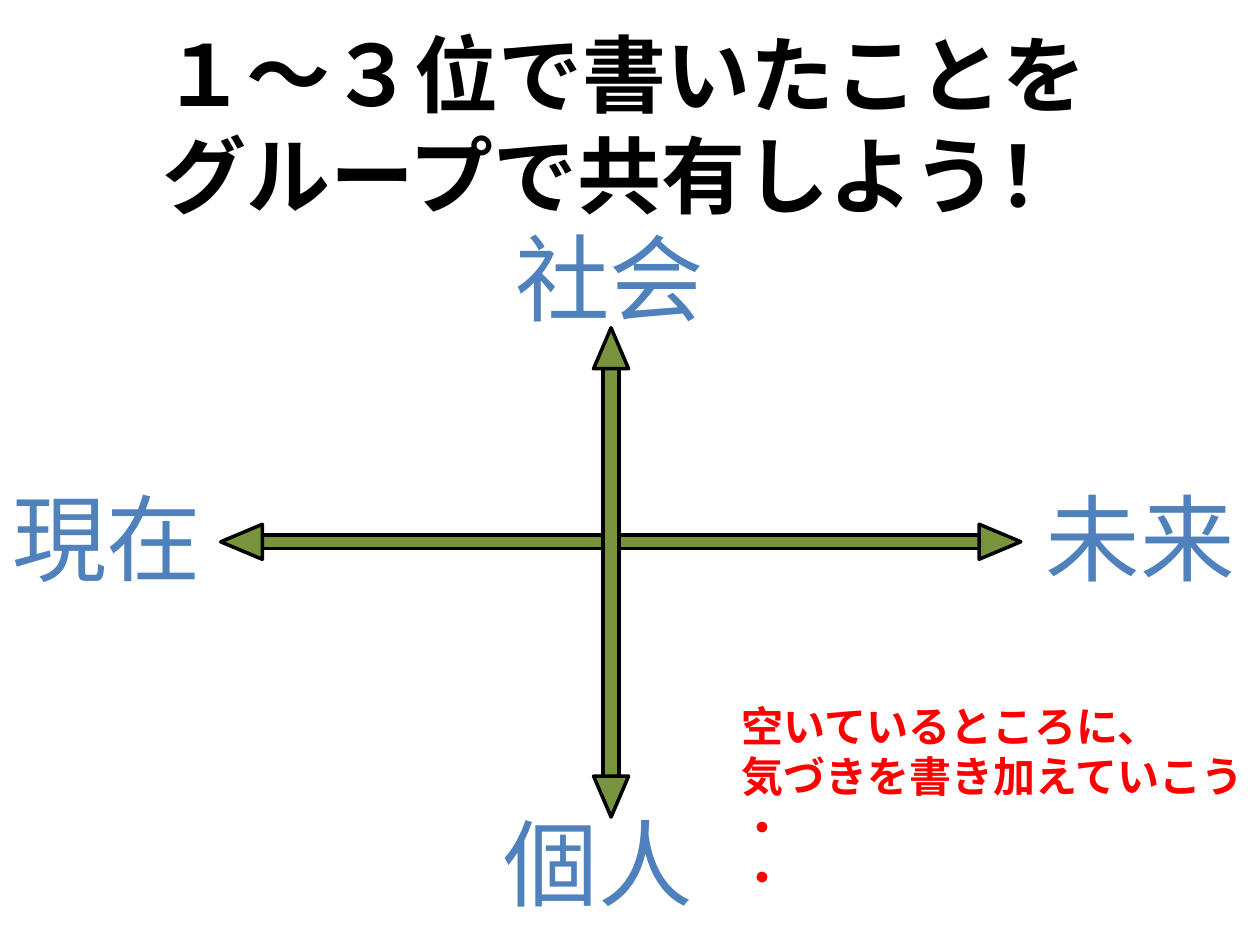
"""Build a slide with crossed time and society axes for group sharing."""
from pptx import Presentation
from pptx.dml.color import RGBColor
from pptx.enum.shapes import MSO_SHAPE as Kind
from pptx.enum.text import MSO_ANCHOR as Anchor, MSO_AUTO_SIZE as Auto, PP_ALIGN as Align
from pptx.util import Pt


def tint(code):
    return RGBColor.from_string(code)


def write(box, lines, look, color):
    frame = box.text_frame
    frame.word_wrap = True
    frame.auto_size = Auto.NONE
    frame.vertical_anchor = Anchor.TOP
    frame.text = "\n".join(lines)
    for para in frame.paragraphs:
        para.alignment = Align.LEFT
        for key, value in look.items():
            setattr(para.runs[0].font, key, value)
        para.runs[0].font.color.rgb = tint(color)


HEAD = {"name": "Calibri", "size": Pt(48), "bold": True}
NOTE = {"name": "Calibri", "size": Pt(24), "bold": True}
LABEL = {"name": "Noto Sans CJK JP", "size": Pt(54), "bold": False}

deck = Presentation()
deck.slide_width, deck.slide_height = Pt(720), Pt(540)
slide = deck.slides.add_slide(deck.slide_layouts[5])

title = slide.shapes.title
place = {"left": 85.7, "top": 9.4, "width": 613.4, "height": 123.8}
for key, value in place.items():
    setattr(title, key, Pt(value))
write(title, ["１～３位で書いたことを", "グループで共有しよう！"], HEAD, "000000")

mid_x, mid_y = 349.2, 309.6
axes = slide.shapes.add_group_shape()
parts = [
    (Kind.RECTANGLE, mid_x + 2.8, mid_y, 428, 8, 0),
    (Kind.RECTANGLE, mid_x, 328.7, 9.4, 253.4, 0),
    (Kind.ISOSCELES_TRIANGLE, mid_x, 199, 20, 23.4, 0),
    (Kind.ISOSCELES_TRIANGLE, 571.4, mid_y, 20, 23.8, 90),
    (Kind.ISOSCELES_TRIANGLE, 138, mid_y, 20, 23.8, 270),
    (Kind.ISOSCELES_TRIANGLE, mid_x, 455.2, 20, 23.4, 180),
]
for kind, x, y, wide, high, turn in parts:
    part = axes.shapes.add_shape(kind, Pt(x - wide / 2), Pt(y - high / 2), Pt(wide), Pt(high))
    part.rotation = turn
    part.shadow.inherit = False
    part.fill.solid()
    part.fill.fore_color.rgb = tint("77933C")
    part.line.color.rgb = tint("000000")
    part.line.width = Pt(2)

labels = [("社会", 287.3, 122.4), ("個人", 280.8, 456.5), ("現在", 0, 270.7), ("未来", 590.4, 270.7)]
for word, x, y in labels:
    box = slide.shapes.add_textbox(Pt(x), Pt(y), Pt(142.6), Pt(72.7))
    write(box, [word], LABEL, "4F81BD")

note = slide.shapes.add_textbox(Pt(416.8), Pt(396.7), Pt(303.2), Pt(123.8))
write(note, ["空いているところに、", "気づきを書き加えていこう", "・", "・"], NOTE, "FF0000")

deck.save("out.pptx")
